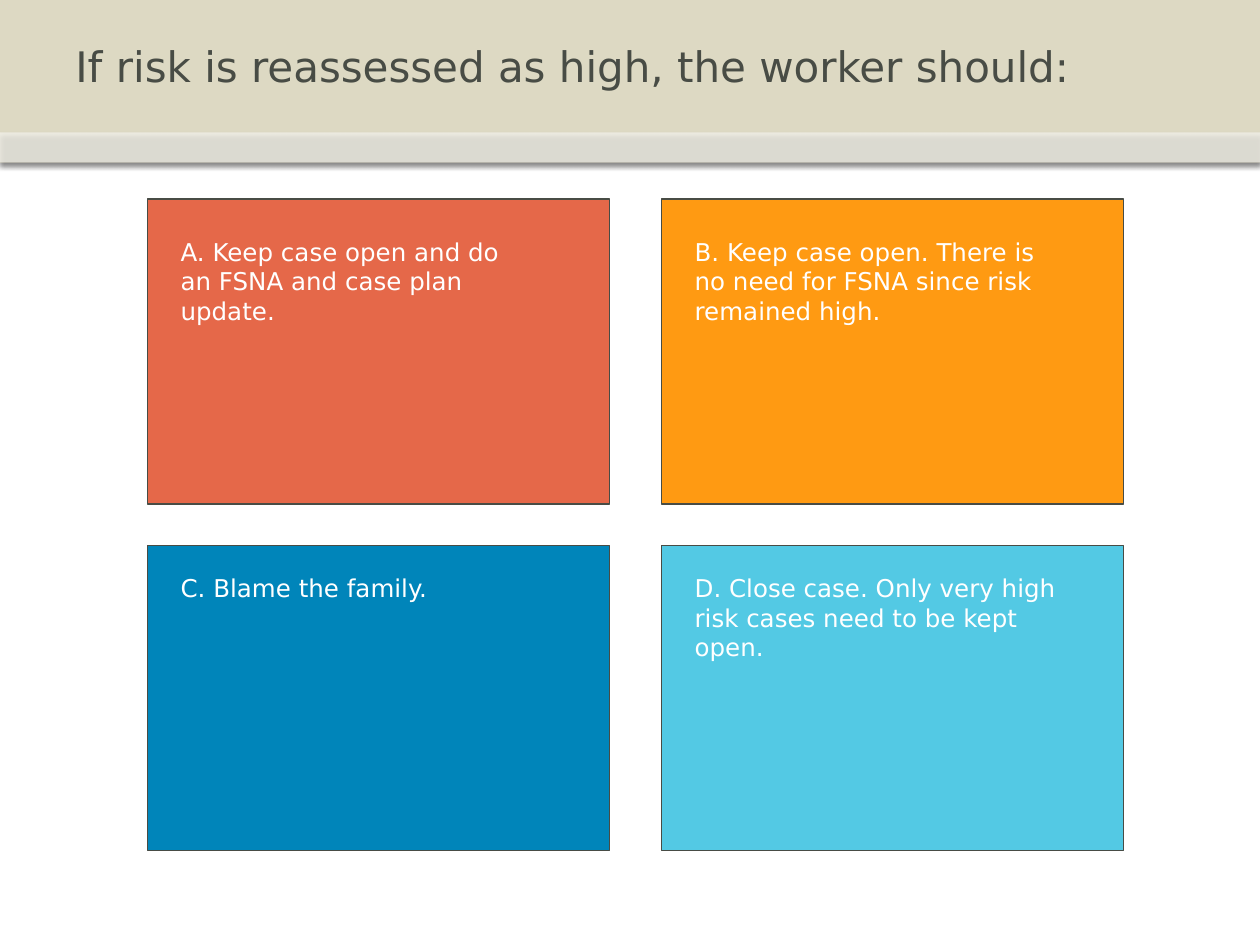
from lxml.etree import SubElement
from pptx import Presentation
from pptx.dml.color import RGBColor
from pptx.enum.shapes import MSO_SHAPE
from pptx.enum.text import MSO_ANCHOR
from pptx.oxml.ns import qn
from pptx.util import Inches, Pt

FONT = "DejaVu Sans"
COLORS = {
    "banner": "DDD9C3", "white": "FFFFFF", "dark": "484C45", "shadow": "000000",
    "red": "E56849", "orange": "FF9A12", "blue": "0085BA", "cyan": "53C9E4",
}
TITLE = "If risk is reassessed as high, the worker should:"
# One list per row: text, card colour, text width
ANSWERS = [
    [("A. Keep case open and do an FSNA and case plan update.", "red", 3),
     ("B. Keep case open. There is no need for FSNA since risk remained high.", "orange", 3.17)],
    [("C. Blame the family.", "blue", 3.25),
     ("D. Close case. Only very high risk cases need to be kept open.", "cyan", 3.33)],
]
CARD_WIDTH, CARD_HEIGHT = 3.67, 2.42
COLUMN_LEFTS = [1.17, 5.25]
ROW_TOPS = [1.58, 4.33]
TEXT_LEFT_OFFSET = 0.165
TEXT_TOPS = [1.83, 4.5]
TEXT_HEIGHT = 0.81


def color(name):
    return RGBColor.from_string(COLORS[name])


def add_rectangle(slide, left, top, width, height, fill, line=None):
    shape = slide.shapes.add_shape(
        MSO_SHAPE.RECTANGLE, Inches(left), Inches(top), Inches(width), Inches(height))
    shape.shadow.inherit = False
    shape.fill.solid()
    shape.fill.fore_color.rgb = color(fill)
    if line:
        shape.line.color.rgb = color(line)
        shape.line.width = Pt(0.75)
    else:
        shape.line.fill.background()
    return shape


def set_alpha(color_element, percent):
    SubElement(color_element, qn("a:alpha"), val=str(percent * 1000))


def add_drop_shadow(shape):
    effects = shape._element.spPr.find(qn("a:effectLst"))
    shadow = SubElement(effects, qn("a:outerShdw"), blurRad=str(Pt(3.1)),
                        dist=str(Pt(1.8)), dir=str(90 * 60000), rotWithShape="0")
    set_alpha(SubElement(shadow, qn("a:srgbClr"), val=COLORS["shadow"]), 35)


def add_text(slide, text, left, top, width, height, size, font_color, anchor=MSO_ANCHOR.TOP):
    box = slide.shapes.add_textbox(Inches(left), Inches(top), Inches(width), Inches(height))
    frame = box.text_frame
    frame.word_wrap = True
    frame.vertical_anchor = anchor
    frame.text = text
    font = frame.paragraphs[0].runs[0].font
    font.name = FONT
    font.size = Pt(size)
    font.color.rgb = color(font_color)


def main():
    presentation = Presentation()
    presentation.slide_width, presentation.slide_height = Inches(10), Inches(7.5)
    slide = presentation.slides.add_slide(presentation.slide_layouts[6])

    banner = add_rectangle(slide, 0, 0, 10, 1.29, "banner")
    strip = add_rectangle(slide, 0, 1.05, 10, 0.24, "white")
    set_alpha(strip._element.spPr.find(".//" + qn("a:srgbClr")), 53)
    for shape in (banner, strip):
        add_drop_shadow(shape)
    add_text(slide, TITLE, 0.5, 0, 9, 1.05, 24, "dark", MSO_ANCHOR.MIDDLE)

    for row, top, text_top in zip(ANSWERS, ROW_TOPS, TEXT_TOPS):
        for (text, fill, text_width), left in zip(row, COLUMN_LEFTS):
            add_rectangle(slide, left, top, CARD_WIDTH, CARD_HEIGHT, fill, "dark")
            add_text(slide, text, left + TEXT_LEFT_OFFSET, text_top,
                     text_width, TEXT_HEIGHT, 14, "white")

    presentation.save("out.pptx")


if __name__ == "__main__":
    main()
